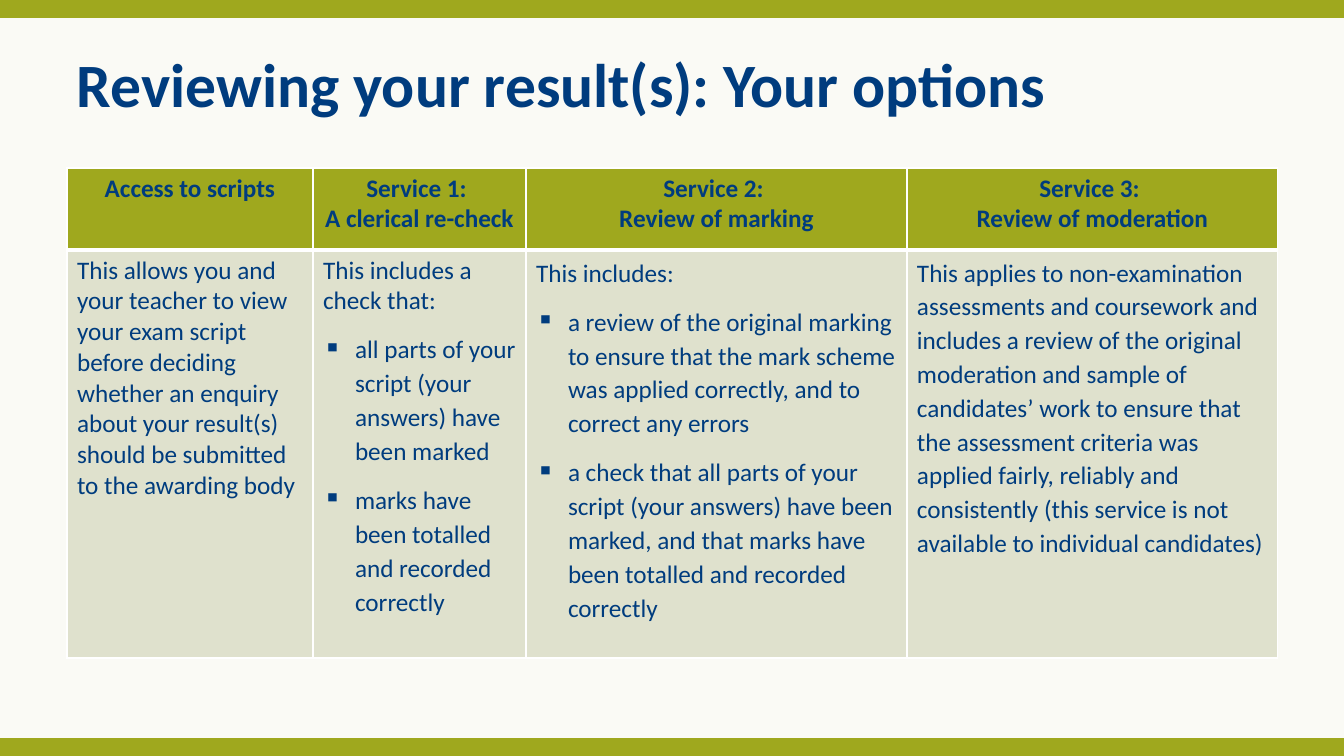
from lxml import etree
from pptx import Presentation
from pptx import util as u
from pptx.dml.color import RGBColor
from pptx.enum import dml, shapes, text
from pptx.oxml import ns

EMU_PER_PX = 914400 / 100.8
W, H = 1344, 756
NAVY = RGBColor(0x00, 0x3C, 0x7E)
OLIVE = RGBColor(0x9F, 0xA8, 0x1E)
SAGE = RGBColor(0xDF, 0xE1, 0xCD)
IVORY = RGBColor(0xFA, 0xFA, 0xF5)
WHITE = RGBColor(0xFF, 0xFF, 0xFF)
COL_WIDTHS = [246, 213, 381, 371]
ROW_HEIGHTS = [82, 408]
BULLET_INDENT = 32

OPTIONS = [
    (["Access to scripts"], 1.0,
     "This allows you and your teacher to view your exam script before deciding whether "
     "an enquiry about your result(s) should be submitted to the awarding body", []),
    (["Service 1: ", "A clerical re-check"], 1.0,
     "This includes a check that:",
     ["all parts of your script (your answers) have been marked",
      "marks have been totalled and recorded correctly"]),
    (["Service 2: ", "Review of marking"], 1.1,
     "This includes:",
     ["a review of the original marking to ensure that the mark scheme was applied "
      "correctly, and to correct any errors",
      "a check that all parts of your script (your answers) have been marked, and that "
      "marks have been totalled and recorded correctly"]),
    (["Service 3: ", "Review of moderation"], 1.1,
     "This applies to non-examination assessments and coursework and includes a review of "
     "the original moderation and sample of candidates’ work to ensure that the assessment "
     "criteria was applied fairly, reliably and consistently (this service is not available "
     "to individual candidates)", []),
]


def px(n):
    return u.Emu(round(n * EMU_PER_PX))


def add_run(p, words, size, bold=False):
    r = p.add_run()
    r.text = words
    r.font.name = "Calibri"
    r.font.size = u.Pt(size)
    r.font.bold = bold
    r.font.color.rgb = NAVY


def paragraph(tf, i):
    return tf.add_paragraph() if i else tf.paragraphs[0]


def add_bullet(p):
    pPr = p._p.get_or_add_pPr()
    pPr.set("marL", str(px(BULLET_INDENT)))
    pPr.set("indent", str(-px(BULLET_INDENT)))
    etree.SubElement(pPr, ns.qn("a:buChar"), char="▪")


def style_cell(cell, color, top, bottom):
    cell.fill.solid()
    cell.fill.fore_color.rgb = color
    tcPr = cell._tc.get_or_add_tcPr()
    sides = [("L", 1), ("R", 1), ("T", top), ("B", bottom)]
    for i, (side, width) in enumerate(sides):
        ln = etree.Element(ns.qn("a:ln" + side), w=str(u.Pt(width)))
        fill = etree.SubElement(ln, ns.qn("a:solidFill"))
        etree.SubElement(fill, ns.qn("a:srgbClr"), val=str(WHITE))
        tcPr.insert(i, ln)


def add_backdrop(s, x, y, w, h):
    sp = s.shapes.add_shape(shapes.MSO_SHAPE.RECTANGLE, px(x), px(y), px(w), px(h))
    sp.shadow.inherit = False
    sp.fill.patterned()
    sp.fill.pattern = dml.MSO_PATTERN.DARK_HORIZONTAL
    sp.fill.fore_color.rgb = IVORY
    sp.fill.back_color.rgb = WHITE
    sp.line.fill.background()
    for edge in (y + 9, y + h - 9):
        bar = s.shapes.add_connector(
            shapes.MSO_CONNECTOR.STRAIGHT, px(x), px(edge), px(x + w), px(edge))
        bar.line.color.rgb = OLIVE
        bar.line.width = u.Pt(13)
        etree.SubElement(bar._element.spPr, ns.qn("a:effectLst"))


def add_title(s, x, y, w, h):
    tf = s.shapes.add_textbox(px(x), px(y), px(w), px(h)).text_frame
    tf.word_wrap = True
    tf.vertical_anchor = text.MSO_ANCHOR.TOP
    p = tf.paragraphs[0]
    p.line_spacing = 0.9
    add_run(p, "Reviewing your result(s): Your options", 44, True)


def add_options_table(s, x, y, w, h):
    table = s.shapes.add_table(2, len(OPTIONS), px(x), px(y), px(w), px(h)).table
    for column, width in zip(table.columns, COL_WIDTHS):
        column.width = px(width)
    for row, height in zip(table.rows, ROW_HEIGHTS):
        row.height = px(height)
    for c, (heading, spacing, intro, bullets) in enumerate(OPTIONS):
        head, body = table.cell(0, c), table.cell(1, c)
        style_cell(head, OLIVE, 1, 3)
        style_cell(body, SAGE, 3, 1)
        for i, words in enumerate(heading):
            p = paragraph(head.text_frame, i)
            p.alignment = text.PP_ALIGN.CENTER
            add_run(p, words, 18, True)
        for i, words in enumerate([intro] + bullets):
            p = paragraph(body.text_frame, i)
            if i:
                add_bullet(p)
                p.space_before = u.Pt(11)
            p.line_spacing = 1.1 if i else spacing
            add_run(p, words, 18)


def main():
    prs = Presentation()
    prs.slide_width, prs.slide_height = px(W), px(H)
    s = prs.slides.add_slide(prs.slide_layouts[6])
    add_backdrop(s, 0, 0, W, H)
    add_title(s, 67, 49, sum(COL_WIDTHS), 93)
    add_options_table(s, 67, 168, sum(COL_WIDTHS), sum(ROW_HEIGHTS))
    prs.save("out.pptx")


if __name__ == "__main__":
    main()
